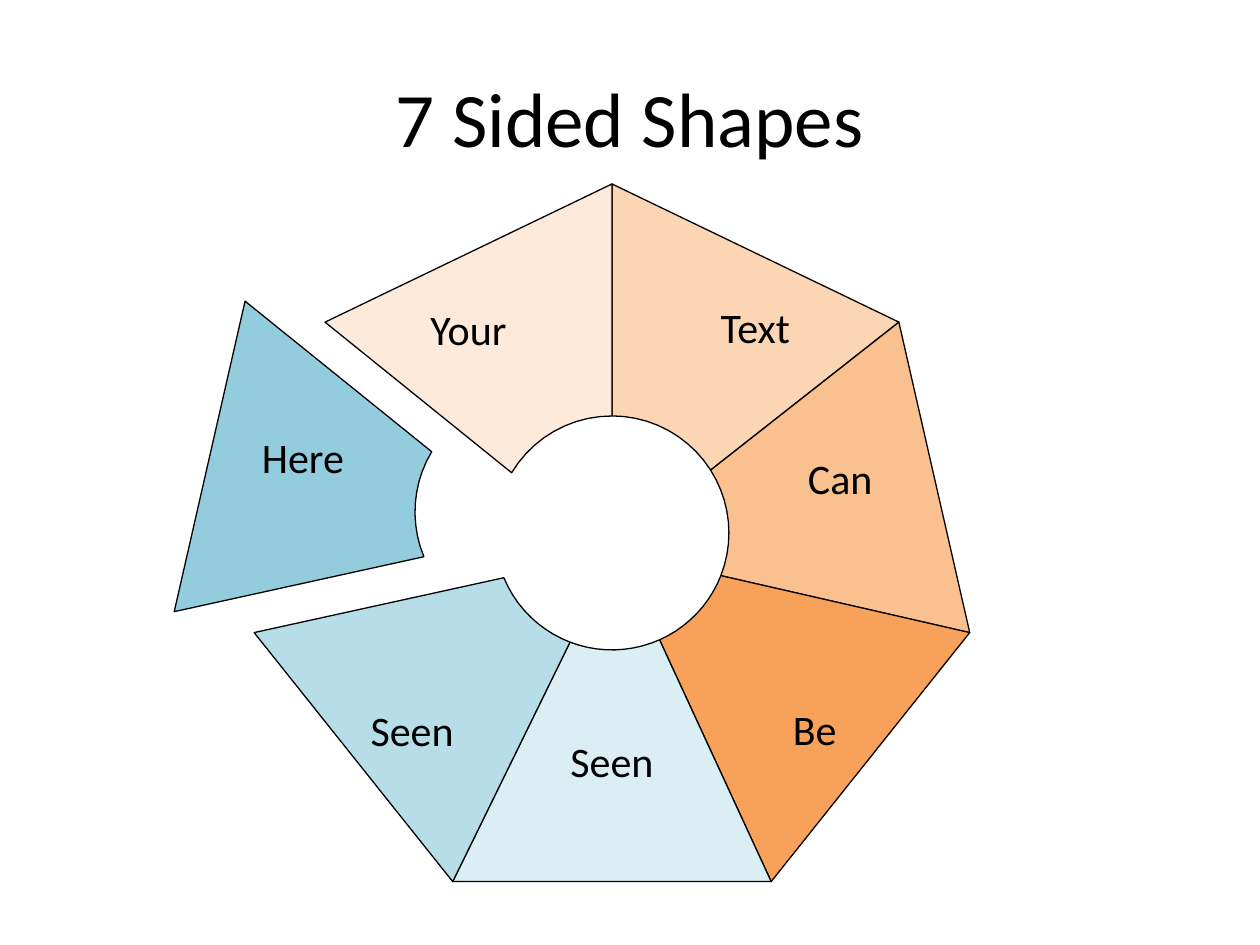
import math

import pptx
import pptx.dml.color
import pptx.enum.text
import pptx.util

PX = 914400 / 126
SIDES = 7
POLYGON = (612, 551, 367)  # centre x, centre y, radius
HOLE = (612, 533, 117)
HOLE_ANGLES = [0, 57.5, 111.4, 156, 201, 247.5, 301, 360]
ARC_STEPS = 10

COLORS = {
    "ink": "000000",
    "peach": "FCD5B5",
    "apricot": "FAC090",
    "orange": "F8A15A",
    "ice": "DBEEF4",
    "sky": "B7DEE8",
    "blue": "93CDDD",
    "cream": "FDEADA",
}

# label, colour, shift away from the ring; clockwise from the top
WEDGES = [
    ("Text", "peach", (0, 0)),
    ("Can", "apricot", (0, 0)),
    ("Be", "orange", (0, 0)),
    ("Seen", "ice", (0, 0)),
    ("Seen", "sky", (0, 0)),
    ("Here", "blue", (-80, -21)),
    ("Your", "cream", (0, 0)),
]


def emu(length):
    return pptx.util.Emu(round(length * PX))


def rgb(name):
    return pptx.dml.color.RGBColor.from_string(COLORS[name])


def point_at(circle, degrees):
    """Point on a circle, with the angle taken clockwise from the top."""
    x, y, radius = circle
    angle = math.radians(degrees)
    return x + radius * math.sin(angle), y - radius * math.cos(angle)


def wedge_outline(index):
    """Outer side of the polygon, then back along the arc of the hole."""
    outer = [point_at(POLYGON, 360 / SIDES * k) for k in (index, index + 1)]
    start, end = HOLE_ANGLES[index:index + 2]
    inner = [point_at(HOLE, end + (start - end) * step / ARC_STEPS)
             for step in range(ARC_STEPS + 1)]
    return outer + inner


def write_text(frame, text, *, size, color="ink", font="Calibri", wrap=True):
    frame.word_wrap = wrap
    frame.vertical_anchor = pptx.enum.text.MSO_ANCHOR.MIDDLE
    para = frame.paragraphs[0]
    para.alignment = pptx.enum.text.PP_ALIGN.CENTER
    span = para.add_run()
    span.text = text
    span.font.size = pptx.util.Pt(size)
    span.font.name = font
    span.font.color.rgb = rgb(color)


class Painter:
    """Holds the text sizes and the current slide."""

    title_size = 44
    label_size = 24

    def __init__(self, page):
        self.page = page

    def title(self, text, left, top, width, height):
        box = self.page.shapes.title
        box.left, box.top = emu(left), emu(top)
        box.width, box.height = emu(width), emu(height)
        write_text(box.text_frame, text, size=self.title_size)

    def wedge(self, outline, text, color, shift):
        points = [(emu(x + shift[0]), emu(y + shift[1])) for x, y in outline]
        builder = self.page.shapes.build_freeform(*points[0])
        builder.add_line_segments(points[1:], close=True)
        shape = builder.convert_to_shape()
        shape.shadow.inherit = False
        shape.fill.solid()
        shape.fill.fore_color.rgb = rgb(color)
        shape.line.color.rgb = rgb("ink")
        shape.line.width = pptx.util.Pt(0)
        write_text(shape.text_frame, text, size=self.label_size, wrap=False)


def main():
    deck = pptx.Presentation()
    deck.slide_width, deck.slide_height = emu(1260), emu(945)
    painter = Painter(deck.slides.add_slide(deck.slide_layouts[5]))
    painter.title("7 Sided Shapes", 63, 38, 1134, 158)
    for index, (text, color, shift) in enumerate(WEDGES):
        painter.wedge(wedge_outline(index), text, color, shift)
    deck.save("out.pptx")


if __name__ == "__main__":
    main()
